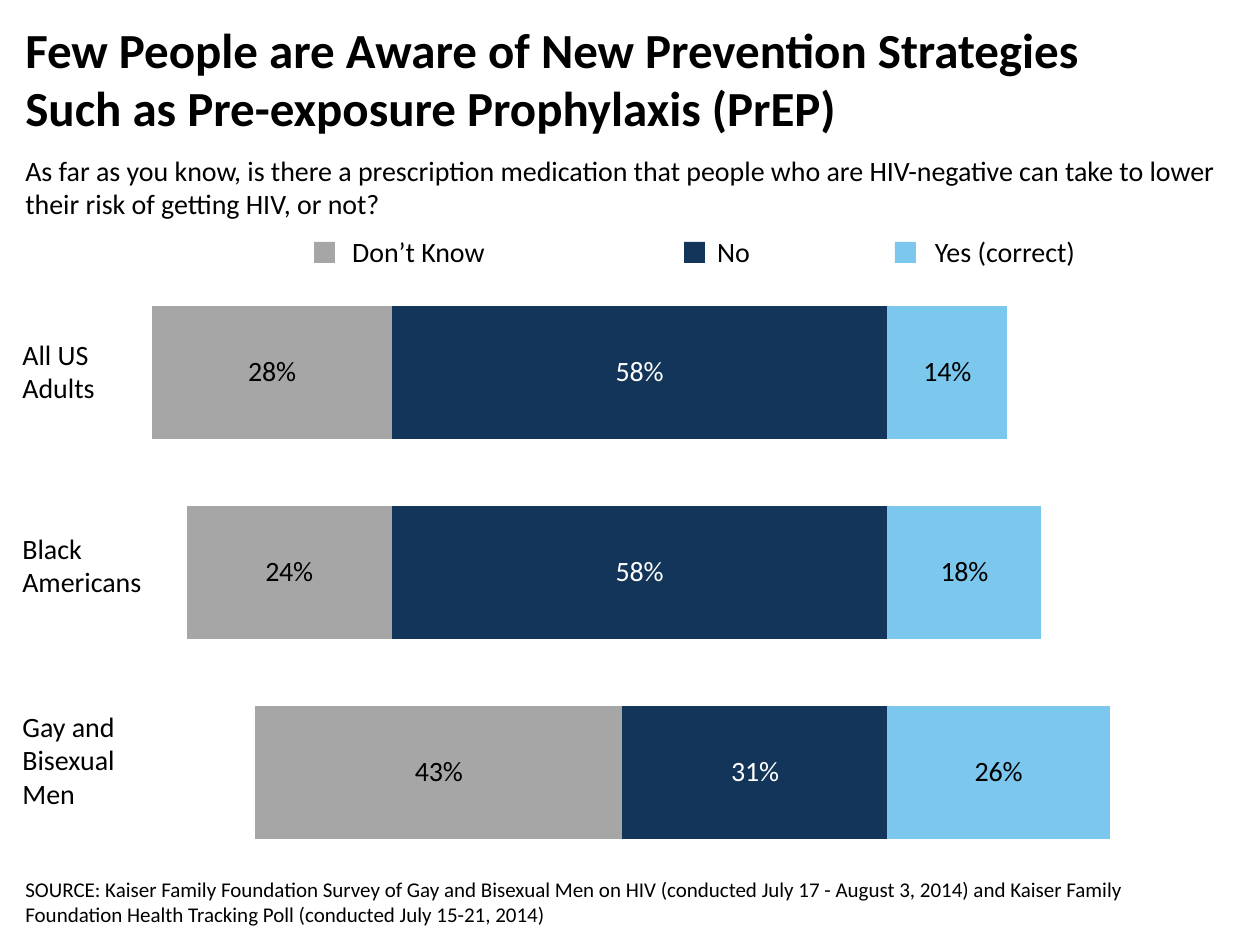
from dataclasses import dataclass

from lxml import etree
from pptx import Presentation
from pptx import util as u
from pptx.chart.data import CategoryChartData
from pptx.dml.color import RGBColor
from pptx.enum import chart as charts
from pptx.enum import shapes, text
from pptx.oxml.ns import qn

EMU_PER_PX = 914400 / 126
FONT = "Calibri"
BLACK = RGBColor(0x00, 0x00, 0x00)
WHITE = RGBColor(0xFF, 0xFF, 0xFF)
NAVY = RGBColor(0x13, 0x35, 0x59)
GRAY = RGBColor(0xA6, 0xA6, 0xA6)
SKY = RGBColor(0x7B, 0xC7, 0xED)


@dataclass(frozen=True)
class Frame:
    left: int
    top: int
    width: int
    height: int

    def emu(self) -> list[u.Emu]:
        return [px(n) for n in (self.left, self.top, self.width, self.height)]


@dataclass(frozen=True)
class Label:
    words: str
    frame: Frame
    size: int = 16
    bold: bool = False
    align: text.PP_ALIGN = text.PP_ALIGN.LEFT
    anchor: text.MSO_ANCHOR = text.MSO_ANCHOR.TOP


@dataclass(frozen=True)
class Answer:
    """One answer: its bars from bottom to top and its legend entry."""
    name: str
    shares: tuple[float, ...]
    fill: RGBColor
    ink: RGBColor
    key_left: int
    label_left: int
    label_width: int


ANSWERS = [
    Answer("No", (-0.31, -0.58, -0.58), NAVY, WHITE, 684, 669, 129),
    Answer("Don’t Know", (-0.43, -0.24, -0.28), GRAY, BLACK, 314, 323, 191),
    Answer("Yes (correct)", (0.26, 0.18, 0.14), SKY, BLACK, 895, 886, 238),
]
GROUPS = [
    Label("All US Adults", Frame(10, 331, 147, 81)),
    Label("Black Americans", Frame(10, 525, 179, 81)),
    Label("Gay and Bisexual Men", Frame(10, 703, 147, 115)),
]
HEADINGS = [
    Label("Few People are Aware of New Prevention Strategies Such as "
          "Pre-exposure Prophylaxis (PrEP)",
          Frame(13, 13, 1147, 126), size=28, bold=True),
    Label("As far as you know, is there a prescription medication that people "
          "who are HIV-negative can take to lower their risk of getting HIV, "
          "or not?", Frame(13, 147, 1235, 81)),
    Label("SOURCE: Kaiser Family Foundation Survey of Gay and Bisexual Men on "
          "HIV (conducted July 17 - August 3, 2014) and Kaiser Family "
          "Foundation Health Tracking Poll (conducted July 15-21, 2014)",
          Frame(13, 857, 1147, 76), size=12, anchor=text.MSO_ANCHOR.BOTTOM),
]
CHART_FRAME = Frame(13, 199, 1235, 693)
PLOT_LAYOUT = {"layoutTarget": "inner", "xMode": "edge", "yMode": "edge",
               "x": 0.016, "y": 0.106, "w": 0.969, "h": 0.866}
KEY_TOP, KEY_SIDE = 242, 21
LEGEND_TOP, LEGEND_HEIGHT = 228, 47


def px(length: int) -> u.Emu:
    return u.Emu(round(length * EMU_PER_PX))


def set_all(target, values: dict) -> None:
    for name, value in values.items():
        setattr(target, name, value)


def style_font(font, size: int, color: RGBColor, bold: bool = False) -> None:
    set_all(font, {"name": FONT, "size": u.Pt(size), "bold": bold})
    font.color.rgb = color


def add_label(page, label: Label) -> None:
    frame = page.shapes.add_textbox(*label.frame.emu()).text_frame
    set_all(frame, {"word_wrap": True, "vertical_anchor": label.anchor})
    para = frame.paragraphs[0]
    para.alignment = label.align
    span = para.add_run()
    span.text = label.words
    style_font(span.font, label.size, BLACK, label.bold)


def add_legend_entry(page, answer: Answer) -> None:
    frame = Frame(answer.label_left, LEGEND_TOP,
                  answer.label_width, LEGEND_HEIGHT)
    add_label(page, Label(answer.name, frame, align=text.PP_ALIGN.CENTER))
    key = page.shapes.add_shape(
        shapes.MSO_SHAPE.RECTANGLE,
        *Frame(answer.key_left, KEY_TOP, KEY_SIDE, KEY_SIDE).emu())
    key.shadow.inherit = False
    key.fill.solid()
    key.fill.fore_color.rgb = answer.fill
    key.line.fill.background()


def place_plot(chart) -> None:
    """Fix the inner plot area as fractions of the chart frame."""
    area = chart.plots[0]._element.getparent()
    for old in area.findall(qn("c:layout")):
        area.remove(old)
    layout = etree.Element(qn("c:layout"))
    manual = etree.SubElement(layout, qn("c:manualLayout"))
    for name, value in PLOT_LAYOUT.items():
        etree.SubElement(manual, qn(f"c:{name}")).set("val", str(value))
    area.insert(0, layout)


def add_answer_chart(page) -> None:
    """Stacked bars where answers other than the correct one run left."""
    data = CategoryChartData(number_format="0%")
    data.categories = ["1", "2", "3"]
    for answer in ANSWERS:
        data.add_series(answer.name, answer.shares)
    chart = page.shapes.add_chart(charts.XL_CHART_TYPE.BAR_STACKED,
                                  *CHART_FRAME.emu(), data).chart
    set_all(chart, {"has_legend": False, "has_title": False})
    style_font(chart.font, 18, BLACK)
    set_all(chart.value_axis, {"minimum_scale": -1, "maximum_scale": 0.4,
                               "has_major_gridlines": False, "visible": False})
    chart.category_axis.visible = False
    plot = chart.plots[0]
    set_all(plot, {"gap_width": 50, "overlap": 100,
                   "vary_by_categories": False})
    for series, answer in zip(plot.series, ANSWERS):
        series.invert_if_negative = False
        series.format.fill.solid()
        series.format.fill.fore_color.rgb = answer.fill
        labels = series.data_labels
        set_all(labels, {"show_value": True, "number_format": "0%;0%",
                         "number_format_is_linked": False,
                         "position": charts.XL_LABEL_POSITION.CENTER})
        style_font(labels.font, 16, answer.ink)
    place_plot(chart)


def main() -> None:
    deck = Presentation()
    set_all(deck, {"slide_width": px(1260), "slide_height": px(945)})
    page = deck.slides.add_slide(deck.slide_layouts[6])
    add_answer_chart(page)
    for label in HEADINGS + GROUPS:
        add_label(page, label)
    for answer in ANSWERS:
        add_legend_entry(page, answer)
    deck.save("out.pptx")


if __name__ == "__main__":
    main()
